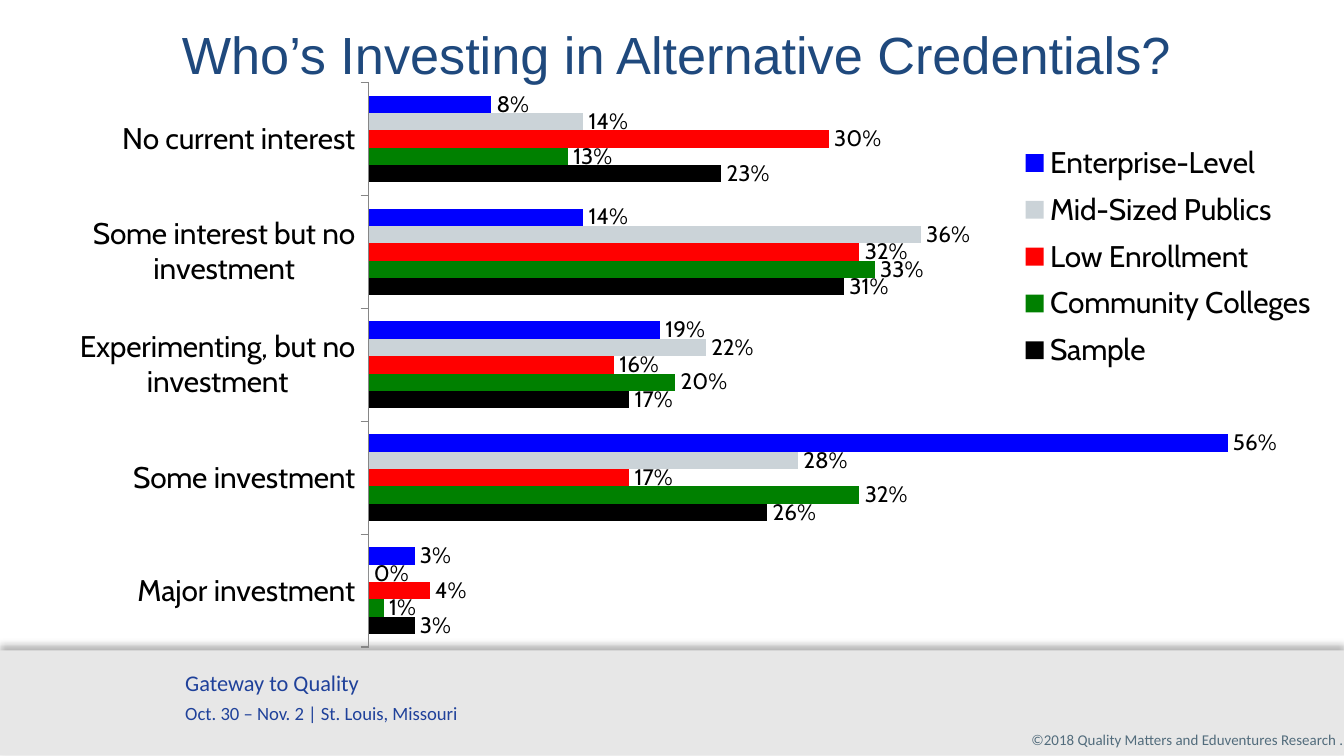
import pptx
import pptx.chart.data
import pptx.dml.color
import pptx.enum.chart
import pptx.enum.shapes
import pptx.enum.text
import pptx.oxml
import pptx.oxml.ns
import pptx.util

Inches = pptx.util.Inches
Pt = pptx.util.Pt
RGBColor = pptx.dml.color.RGBColor
Align = pptx.enum.text.PP_ALIGN
Anchor = pptx.enum.text.MSO_ANCHOR

BLACK = RGBColor(0x00, 0x00, 0x00)
GREEN = RGBColor(0x00, 0x80, 0x00)
RED = RGBColor(0xFF, 0x00, 0x00)
SILVER = RGBColor(0xCB, 0xD3, 0xD8)
BLUE = RGBColor(0x00, 0x00, 0xFF)
AXIS_GRAY = RGBColor(0x86, 0x86, 0x86)
FOOTER_GRAY = RGBColor(0xE7, 0xE7, 0xE7)
FOOTER_BLUE = RGBColor(0x1F, 0x41, 0x9A)
COPYRIGHT_SLATE = RGBColor(0x52, 0x6C, 0x7C)
TITLE_NAVY = RGBColor(0x1F, 0x49, 0x7D)

INTEREST_LEVELS = [
    "Major investment",
    "Some investment",
    "Experimenting, but no investment",
    "Some interest but no investment",
    "No current interest",
]
INSTITUTIONS = [
    ("Sample", BLACK, (0.03, 0.26, 0.17, 0.31, 0.23)),
    ("Community Colleges", GREEN, (0.01, 0.32, 0.20, 0.33, 0.13)),
    ("Low Enrollment", RED, (0.04, 0.17, 0.16, 0.32, 0.30)),
    ("Mid-Sized Publics", SILVER, (0, 0.28, 0.22, 0.36, 0.14)),
    ("Enterprise-Level", BLUE, (0.03, 0.56, 0.19, 0.14, 0.08)),
]


class SlideBuilder:
    title_font = "Arial"
    footer_font = "Calibri"
    chart_font = "Cabin"

    def __init__(self, slide):
        self.slide = slide

    def band(self, left, top, width, height, color):
        band = self.slide.shapes.add_shape(
            pptx.enum.shapes.MSO_SHAPE.RECTANGLE,
            Inches(left), Inches(top), Inches(width), Inches(height))
        band.fill.solid()
        band.fill.fore_color.rgb = color
        band.line.fill.background()
        band.shadow.inherit = False
        effects = band._element.spPr.find(pptx.oxml.ns.qn("a:effectLst"))
        effects.append(pptx.oxml.parse_xml(
            f'<a:outerShdw {pptx.oxml.ns.nsdecls("a")} blurRad="{Pt(4)}" '
            f'dist="{Pt(3)}" dir="16200000" rotWithShape="0">'
            '<a:srgbClr val="000000"><a:alpha val="30000"/></a:srgbClr>'
            '</a:outerShdw>'))

    def text(self, left, top, width, height, lines, font, color,
             align=Align.LEFT, anchor=Anchor.TOP, insets=(0.1, 0.05, 0.1, 0.05),
             line_spacing=None, grow=True):
        box = self.slide.shapes.add_textbox(
            Inches(left), Inches(top), Inches(width), Inches(height))
        frame = box.text_frame
        frame.word_wrap = True
        if grow:
            frame.auto_size = pptx.enum.text.MSO_AUTO_SIZE.SHAPE_TO_FIT_TEXT
        frame.vertical_anchor = anchor
        (frame.margin_left, frame.margin_top,
         frame.margin_right, frame.margin_bottom) = map(Inches, insets)
        for index, (wording, size) in enumerate(lines):
            paragraph = frame.add_paragraph() if index else frame.paragraphs[0]
            paragraph.alignment = align
            if index:
                paragraph.space_before = Pt(3)
            if line_spacing:
                paragraph.line_spacing = line_spacing
            run = paragraph.add_run()
            run.text = wording
            run.font.name = font
            run.font.size = Pt(size)
            run.font.color.rgb = color

    def style_font(self, font, size):
        font.name = self.chart_font
        font.size = Pt(size)
        font.color.rgb = BLACK

    def manual_layout(self, parent, index, x, y, w, h, inner=False):
        for layout in parent.findall(pptx.oxml.ns.qn("c:layout")):
            parent.remove(layout)
        target = '<c:layoutTarget val="inner"/>' if inner else ""
        parent.insert(index, pptx.oxml.parse_xml(
            f'<c:layout {pptx.oxml.ns.nsdecls("c")}><c:manualLayout>{target}'
            '<c:xMode val="edge"/><c:yMode val="edge"/>'
            f'<c:x val="{x}"/><c:y val="{y}"/><c:w val="{w}"/><c:h val="{h}"/>'
            '</c:manualLayout></c:layout>'))

    def bar_chart(self, left, top, width, height, categories, groups):
        data = pptx.chart.data.CategoryChartData(number_format="0%")
        data.categories = categories
        for name, color, shares in groups:
            data.add_series(name, shares)
        chart = self.slide.shapes.add_chart(
            pptx.enum.chart.XL_CHART_TYPE.BAR_CLUSTERED,
            Inches(left), Inches(top), Inches(width), Inches(height), data).chart
        chart.has_title = False
        self.style_font(chart.font, 18)

        plot = chart.plots[0]
        plot.gap_width = 150
        plot.vary_by_categories = False
        for series, (name, color, shares) in zip(plot.series, groups):
            series.format.fill.solid()
            series.format.fill.fore_color.rgb = color
            labels = series.data_labels
            labels.show_value = True
            labels.number_format = "0%"
            labels.number_format_is_linked = False
            labels.position = pptx.enum.chart.XL_LABEL_POSITION.OUTSIDE_END
            self.style_font(labels.font, 12)

        levels = chart.category_axis
        levels.major_tick_mark = pptx.enum.chart.XL_TICK_MARK.OUTSIDE
        levels.format.line.color.rgb = AXIS_GRAY
        levels.format.line.width = Pt(0.75)
        self.style_font(levels.tick_labels.font, 16)
        shares_axis = chart.value_axis
        shares_axis.minimum_scale = 0
        shares_axis.maximum_scale = 0.6
        shares_axis.has_major_gridlines = False
        shares_axis.tick_labels.number_format = "0%"
        shares_axis.tick_labels.number_format_is_linked = False
        shares_axis.visible = False

        chart.has_legend = True
        legend = chart.legend
        legend.position = pptx.enum.chart.XL_LEGEND_POSITION.RIGHT
        legend.include_in_layout = False
        self.style_font(legend.font, 16)
        self.manual_layout(legend._element, 1, 0.762, 0.085, 0.23, 0.41)
        plot_area = chart._chartSpace.chart.plotArea
        self.manual_layout(plot_area, 0, 0.256, 0, 0.715, 0.941, inner=True)


def main():
    deck = pptx.Presentation()
    deck.slide_width = Inches(10)
    deck.slide_height = deck.slide_width * 9 // 16
    builder = SlideBuilder(deck.slides.add_slide(deck.slide_layouts[6]))
    builder.band(0, 4.84, 10, 0.78, FOOTER_GRAY)
    builder.text(1.28, 4.93, 6.39, 0.51,
                 [("Gateway to Quality", 12),
                  ("Oct. 30 – Nov. 2 | St. Louis, Missouri", 10)],
                 builder.footer_font, FOOTER_BLUE)
    builder.text(7.47, 5.39, 2.53, 0.24,
                 [("©2018 Quality Matters and Eduventures Research .", 8)],
                 builder.footer_font, COPYRIGHT_SLATE, align=Align.RIGHT,
                 insets=(0.1, 0.05, 0, 0.05))
    builder.text(0.29, 0.17, 9.48, 0.57,
                 [("Who’s Investing in Alternative Credentials?", 28)],
                 builder.title_font, TITLE_NAVY, align=Align.CENTER,
                 anchor=Anchor.BOTTOM, insets=(0.1, 0.1, 0.1, 0.1),
                 line_spacing=0.9, grow=False)
    builder.bar_chart(0.29, 0.61, 9.58, 4.47, INTEREST_LEVELS, INSTITUTIONS)
    deck.save("out.pptx")


if __name__ == "__main__":
    main()
